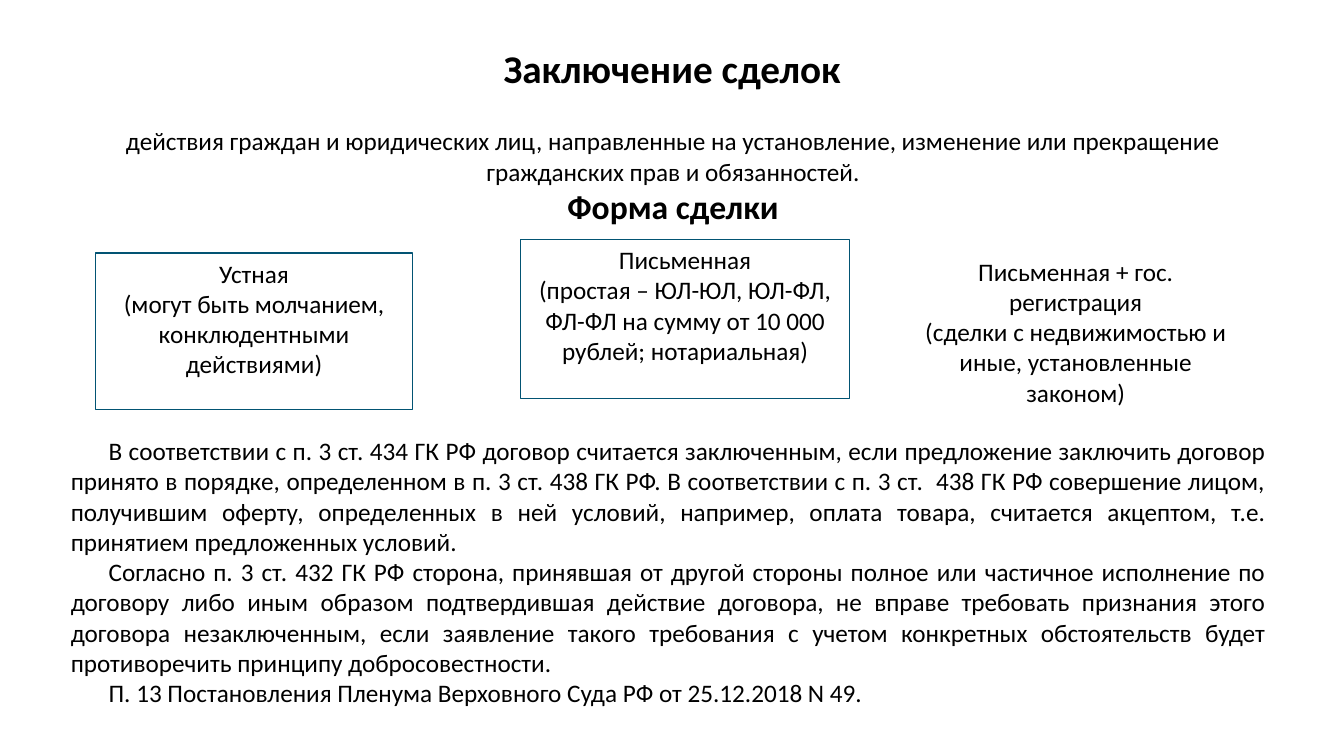
from pptx import Presentation
from pptx.dml.color import RGBColor
from pptx.enum.shapes import MSO_SHAPE as Shape
from pptx.enum.text import MSO_ANCHOR as Anchor, PP_ALIGN as Align
from pptx.util import Pt

EMU_PER_PX = 9525


def px(length):
    """Turn whole pixels into EMU."""
    return length * EMU_PER_PX


def color(value):
    """Turn a hex string into a colour."""
    return RGBColor.from_string(value)


class SlideBuilder:
    """Holds the style and the current slide."""

    font_name = "Calibri"
    text_color = "000000"
    border_color = "025373"
    body_size = 18

    def __init__(self, presentation):
        """Add a blank slide to the presentation."""
        self.slide = presentation.slides.add_slide(presentation.slide_layouts[6])

    def fill_text(self, shape, lines, align, indent=0):
        """Fill a shape with body paragraphs."""
        text_frame = shape.text_frame
        text_frame.word_wrap = True
        text_frame.vertical_anchor = Anchor.TOP
        text_frame.text = "\n".join(lines)
        for paragraph in text_frame.paragraphs:
            paragraph.alignment = align
            if indent:
                properties = paragraph._p.get_or_add_pPr()
                properties.set("marL", "0")
                properties.set("indent", str(px(indent)))
            self.style(paragraph, self.body_size)

    def style(self, paragraph, size, bold=False):
        """Format the runs of a paragraph."""
        for run in paragraph.runs:
            run.font.name = self.font_name
            run.font.size = Pt(size)
            run.font.bold = bold
            run.font.color.rgb = color(self.text_color)

    def text(self, area, lines, align=Align.CENTER, indent=0):
        """Add a text box and return its paragraphs."""
        shape = self.slide.shapes.add_textbox(*map(px, area))
        self.fill_text(shape, lines, align, indent)
        return shape.text_frame.paragraphs

    def box(self, area, lines):
        """Add an outlined rectangle with centred text."""
        shape = self.slide.shapes.add_shape(Shape.RECTANGLE, *map(px, area))
        shape.shadow.inherit = False
        shape.fill.background()
        shape.line.color.rgb = color(self.border_color)
        shape.line.width = Pt(0.75)
        self.fill_text(shape, lines, Align.CENTER)


def main():
    """Build and save the slide."""
    presentation = Presentation()
    presentation.slide_width = px(1280)
    presentation.slide_height = px(720)
    builder = SlideBuilder(presentation)

    builder.box((91, 241, 302, 149), [
        "Устная",
        "(могут быть молчанием, конклюдентными действиями)",
    ])
    builder.box((496, 228, 313, 152), [
        "Письменная",
        "(простая – ЮЛ-ЮЛ, ЮЛ-ФЛ, ФЛ-ФЛ на сумму от 10 000 рублей; нотариальная)",
    ])
    definition = builder.text((104, 115, 1074, 107), [
        "действия граждан и юридических лиц, направленные на установление, "
        "изменение или прекращение гражданских прав и обязанностей.",
        "Форма сделки",
    ])
    builder.style(definition[1], 24, bold=True)
    builder.text((862, 239, 325, 155), [
        "Письменная + гос. регистрация",
        "(сделки с недвижимостью и иные, установленные законом)",
    ])
    builder.text((58, 410, 1157, 272), [
        "В соответствии с п. 3 ст. 434 ГК РФ договор считается заключенным, "
        "если предложение заключить договор принято в порядке, определенном "
        "в п. 3 ст. 438 ГК РФ. В соответствии с п. 3 ст.  438 ГК РФ совершение "
        "лицом, получившим оферту, определенных в ней условий, например, оплата "
        "товара, считается акцептом, т.е. принятием предложенных условий.",
        "Согласно п. 3 ст. 432 ГК РФ сторона, принявшая от другой стороны полное "
        "или частичное исполнение по договору либо иным образом подтвердившая "
        "действие договора, не вправе требовать признания этого договора "
        "незаключенным, если заявление такого требования с учетом конкретных "
        "обстоятельств будет противоречить принципу добросовестности.",
        "П. 13 Постановления Пленума Верховного Суда РФ от 25.12.2018 N 49.",
    ], Align.JUSTIFY, indent=36)
    title = builder.text((382, 37, 516, 55), ["Заключение сделок"])
    builder.style(title[0], 28, bold=True)

    presentation.save("out.pptx")


if __name__ == "__main__":
    main()
